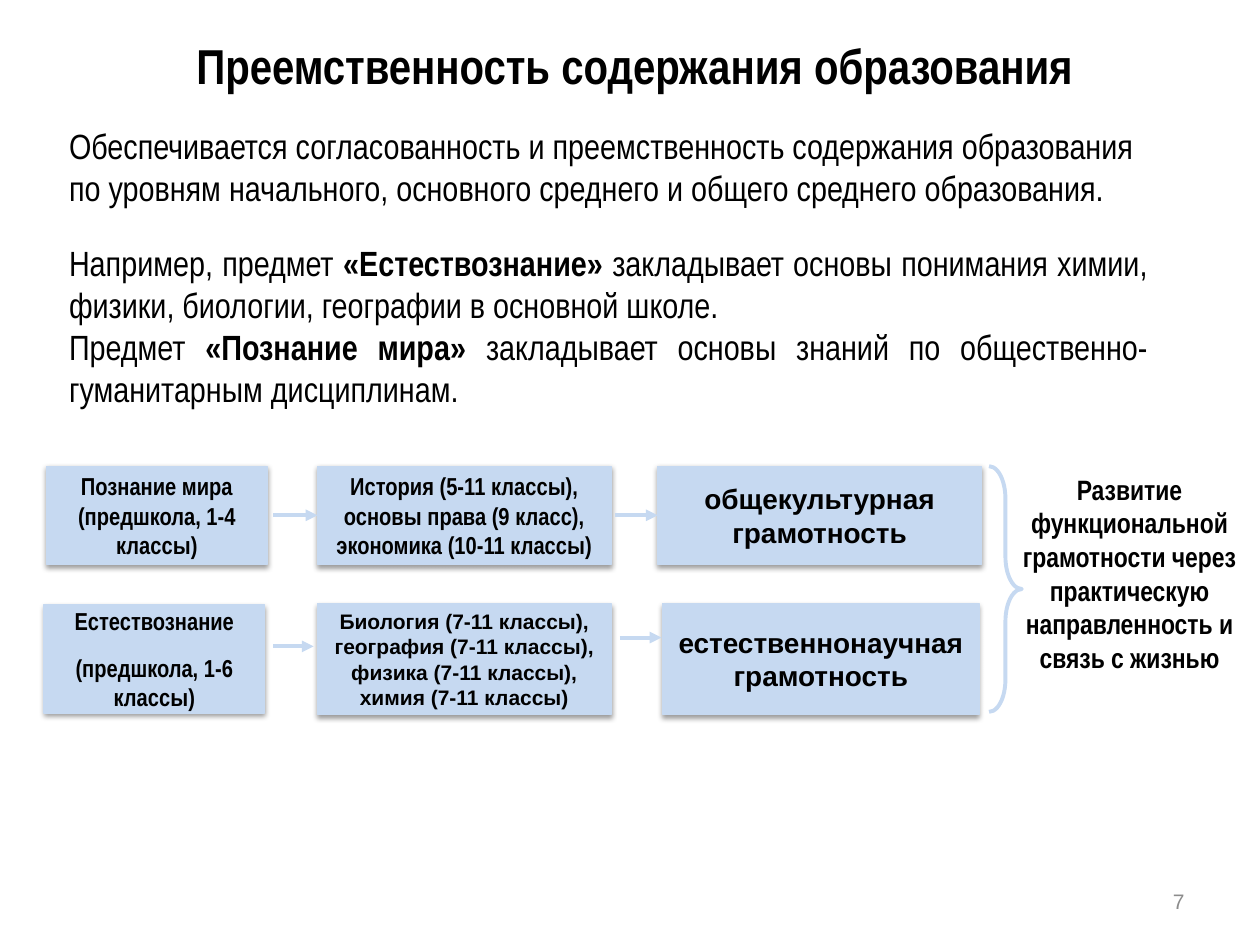
from dataclasses import dataclass
from typing import Optional

from lxml import etree
from pptx import Presentation
from pptx.dml.color import RGBColor
from pptx.enum.shapes import MSO_CONNECTOR as Connector, MSO_SHAPE as Preset
from pptx.enum.text import MSO_ANCHOR as Anchor, PP_ALIGN as Align
from pptx.oxml.ns import qn
from pptx.util import Inches, Pt

COLORS = {"text": "000000", "box": "C6D9F1", "number": "8C8C8C"}
NARROW = "Arial Narrow"
LEFT_SIDE = 1


@dataclass
class Box:
    left: float
    top: float
    width: float
    height: float


@dataclass
class Paragraph:
    runs: list  # (text, bold) pairs
    align: Align = Align.CENTER
    space_before: float = 0
    space_after: float = 0


@dataclass
class Step:
    box: Box
    lines: list
    size: float
    font: str = NARROW


@dataclass
class Arrow:
    start: float
    end: float
    y: float
    target: Optional[int] = None  # index of the step it is joined to


def color(name: str) -> RGBColor:
    return RGBColor.from_string(COLORS[name])


def place(box: Box) -> list:
    return [Inches(value) for value in (box.left, box.top, box.width, box.height)]


def write(shape, paragraphs: list, size: float, font: str = NARROW,
          text_color: str = "text", anchor: Anchor = Anchor.TOP) -> None:
    frame = shape.text_frame
    frame.word_wrap = True
    frame.vertical_anchor = anchor
    for index, item in enumerate(paragraphs):
        paragraph = frame.add_paragraph() if index else frame.paragraphs[0]
        layout = {"alignment": item.align, "space_before": Pt(item.space_before),
                  "space_after": Pt(item.space_after)}
        for name, value in layout.items():
            setattr(paragraph, name, value)
        for text, bold in item.runs:
            run = paragraph.add_run()
            run.text = text
            for name, value in {"size": Pt(size), "name": font, "bold": bold}.items():
                setattr(run.font, name, value)
            run.font.color.rgb = color(text_color)


def add_text(slide, box: Box, paragraphs: list, size: float, **style) -> None:
    write(slide.shapes.add_textbox(*place(box)), paragraphs, size, **style)


def add_shadow(shape) -> None:
    properties = shape._element.spPr
    effects = properties.find(qn("a:effectLst"))
    shadow = etree.SubElement(effects, qn("a:outerShdw"), blurRad=str(Pt(3.1)),
                              dist=str(Pt(1.6)), dir="5400000", rotWithShape="0")
    shade = etree.SubElement(shadow, qn("a:srgbClr"), val=COLORS["text"])
    etree.SubElement(shade, qn("a:alpha"), val="38000")


def add_step(slide, step: Step):
    shape = slide.shapes.add_shape(Preset.RECTANGLE, *place(step.box))
    shape.shadow.inherit = False
    add_shadow(shape)
    shape.fill.solid()
    shape.fill.fore_color.rgb = color("box")
    shape.line.color.rgb = color("box")
    shape.line.width = Pt(0.75)
    paragraphs = [Paragraph([(line, True)], space_after=10) for line in step.lines]
    write(shape, paragraphs, step.size, step.font, anchor=Anchor.MIDDLE)
    return shape


def add_arrow(slide, arrow: Arrow, steps: list) -> None:
    connector = slide.shapes.add_connector(
        Connector.STRAIGHT, Inches(arrow.start), Inches(arrow.y),
        Inches(arrow.end), Inches(arrow.y))
    if arrow.target is not None:
        connector.end_connect(steps[arrow.target], LEFT_SIDE)
    connector.line.color.rgb = color("box")
    connector.line.width = Pt(2.25)
    etree.SubElement(connector.line._get_or_add_ln(), qn("a:tailEnd"), type="triangle")
    etree.SubElement(connector._element.spPr, qn("a:effectLst"))


def add_brace(slide, box: Box) -> None:
    brace = slide.shapes.add_shape(Preset.RIGHT_BRACE, *place(box))
    brace.shadow.inherit = False
    brace.adjustments[0] = 0.99
    brace.adjustments[1] = 0.5
    brace.fill.background()
    brace.line.color.rgb = color("box")
    brace.line.width = Pt(2.25)


TITLE = [Paragraph([("Преемственность содержания образования", True)])]
BODY = [
    Paragraph([("Обеспечивается согласованность и преемственность содержания образования "
                "по уровням начального, основного среднего и общего среднего "
                "образования.", False)], Align.LEFT),
    Paragraph([("Например, предмет ", False), ("«Естествознание» ", True),
               ("закладывает основы понимания химии, физики, биологии, географии "
                "в основной школе.", False)], Align.JUSTIFY, space_before=19),
    Paragraph([("Предмет ", False), ("«Познание мира» ", True),
               ("закладывает основы знаний по общественно-гуманитарным "
                "дисциплинам.", False)], Align.JUSTIFY),
]
OUTCOME = [Paragraph([("Развитие функциональной грамотности через практическую "
                       "направленность и связь с жизнью", True)])]

STEPS = [
    # Humanities row
    Step(Box(0.37, 3.7, 1.75, 0.78), ["Познание мира (предшкола, 1-4 классы)"], 14),
    Step(Box(2.52, 3.7, 2.33, 0.78),
         ["История (5-11 классы), основы права (9 класс), экономика (10-11 классы)"], 14),
    Step(Box(5.22, 3.7, 2.57, 0.78), ["общекультурная грамотность"], 16, "Arial"),
    # Science row
    Step(Box(0.35, 4.8, 1.75, 0.86), ["Естествознание", "(предшкола, 1-6 классы)"], 14),
    Step(Box(2.52, 4.79, 2.33, 0.88),
         ["Биология (7-11 классы), география (7-11 классы), физика (7-11 классы), "
          "химия (7-11 классы)"], 12, "Arial"),
    Step(Box(5.26, 4.79, 2.51, 0.88), ["естественнонаучная грамотность"], 16, "Arial"),
]
ARROWS = [
    Arrow(2.17, 2.52, 4.09, target=1),
    Arrow(4.88, 5.22, 4.09, target=2),
    Arrow(2.17, 2.49, 5.13),
    Arrow(4.92, 5.25, 5.06),
]


def main() -> None:
    presentation = Presentation()
    presentation.slide_width = Inches(10)
    presentation.slide_height = Inches(7.5)
    slide = presentation.slides.add_slide(presentation.slide_layouts[6])

    # Title and explanation
    add_text(slide, Box(0.23, 0.23, 9.61, 0.57), TITLE, 28)
    add_text(slide, Box(0.45, 0.94, 8.76, 6.5), BODY, 20)

    # Two chains of subjects
    steps = [add_step(slide, step) for step in STEPS]
    for arrow in ARROWS:
        add_arrow(slide, arrow, steps)

    # Common outcome
    add_text(slide, Box(7.95, 3.7, 2.03, 1.72), OUTCOME, 16)
    add_brace(slide, Box(7.85, 3.7, 0.26, 1.95))

    # Slide number
    add_text(slide, Box(7.17, 6.95, 2.33, 0.4), [Paragraph([("7", False)], Align.RIGHT)],
             12, font="Arial", text_color="number", anchor=Anchor.MIDDLE)

    presentation.save("out.pptx")


if __name__ == "__main__":
    main()
